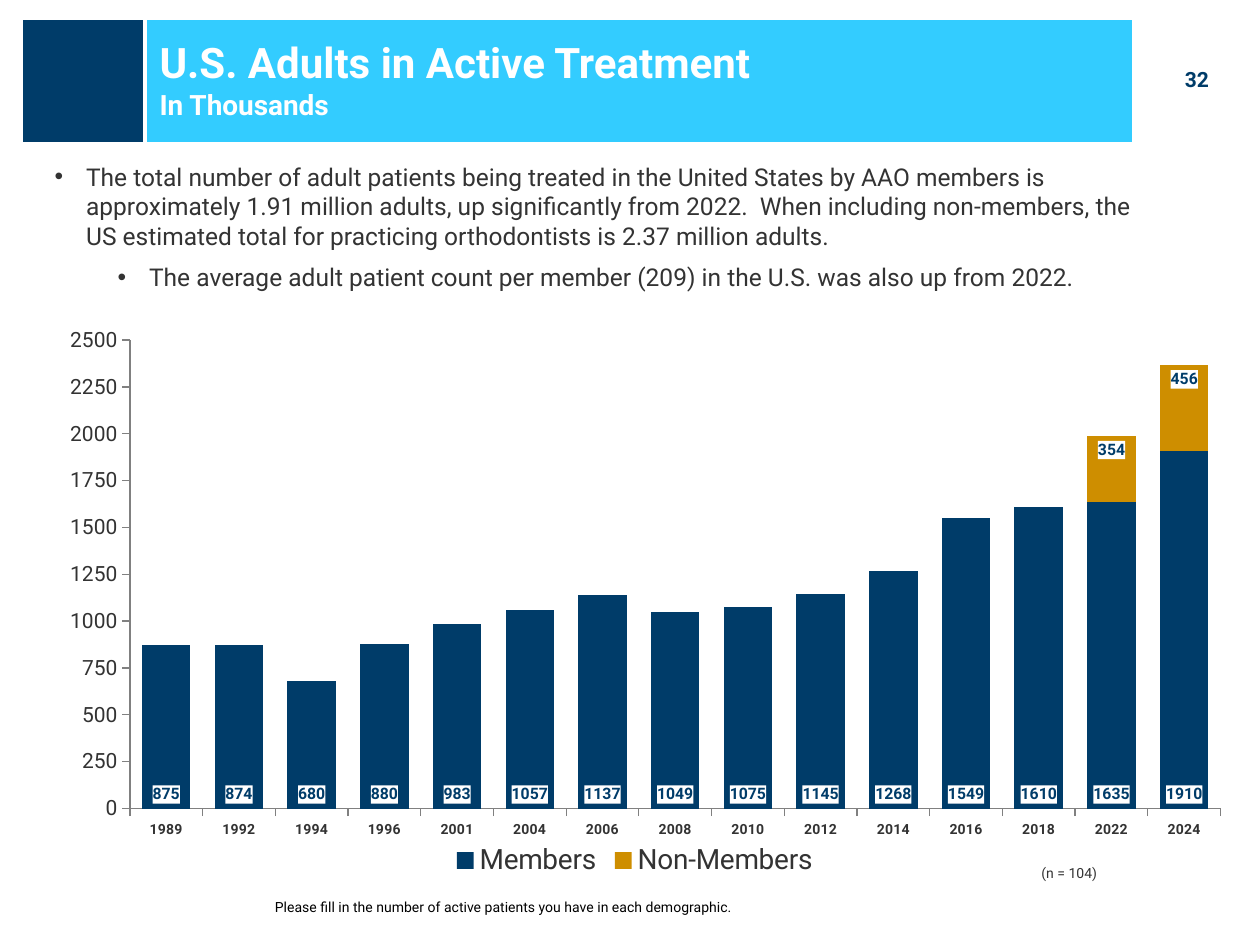
from dataclasses import dataclass

from lxml.etree import SubElement
from pptx import Presentation
from pptx.chart.data import CategoryChartData
from pptx.dml.color import RGBColor
from pptx.enum.chart import XL_CHART_TYPE, XL_LABEL_POSITION, XL_LEGEND_POSITION, XL_TICK_MARK
from pptx.enum.shapes import MSO_SHAPE
from pptx.enum.text import MSO_ANCHOR, MSO_AUTO_SIZE, PP_ALIGN
from pptx.oxml import parse_xml
from pptx.oxml.ns import nsdecls, qn
from pptx.util import Inches, Pt

COLUMNS, ROWS = 120, 90
CELL = Inches(10) // COLUMNS


@dataclass(frozen=True)
class Theme:
    font: str = "Roboto"
    navy: str = "003C69"
    sky: str = "33CCFF"
    gold: str = "CE8E00"
    white: str = "FFFFFF"
    black: str = "000000"
    text: str = "333333"
    axis: str = "808080"
    title: int = 24
    subtitle: int = 16
    body: int = 14
    number: int = 12
    value_axis: int = 12
    legend: int = 16
    label: int = 9
    small: int = 8


THEME = Theme()


@dataclass(frozen=True)
class Box:
    """A rectangle in grid columns and rows."""
    left: float
    top: float
    width: float
    height: float

    def inside(self, left, top, width, height):
        return Box(self.left + left, self.top + top, width, height)

    def lengths(self):
        return [round(value * CELL) for value in (self.left, self.top, self.width, self.height)]


YEARS = ["1989", "1992", "1994", "1996", "2001", "2004", "2006", "2008",
         "2010", "2012", "2014", "2016", "2018", "2022", "2024"]
MEMBERS = [875, 874, 680, 880, 983, 1057, 1137, 1049,
           1075, 1145, 1268, 1549, 1610, 1635, 1910]
NON_MEMBERS = [None] * 13 + [354, 456]
BULLETS = [
    "The total number of adult patients being treated in the United States by AAO members is "
    "approximately 1.91 million adults, up significantly from 2022.  When including non-members, "
    "the US estimated total for practicing orthodontists is 2.37 million adults.",
    "The average adult patient count per member (209) in the U.S. was also up from 2022.",
]


def style_font(font, size, color, bold=False):
    font.name = THEME.font
    font.size = Pt(size)
    font.bold = bold
    font.color.rgb = RGBColor.from_string(color)


def place(shape, box):
    shape.left, shape.top, shape.width, shape.height = box.lengths()


def add_block(slide, box, color):
    block = slide.shapes.add_shape(MSO_SHAPE.RECTANGLE, *box.lengths())
    block.shadow.inherit = False
    block.fill.solid()
    block.fill.fore_color.rgb = RGBColor.from_string(color)
    block.line.color.rgb = RGBColor.from_string(THEME.white)
    block.line.width = Pt(2)


def add_label(slide, box, text, size, color, bold=False, align=PP_ALIGN.LEFT):
    frame = slide.shapes.add_textbox(*box.lengths()).text_frame
    frame.word_wrap = True
    paragraph = frame.paragraphs[0]
    paragraph.text = text
    paragraph.alignment = align
    style_font(paragraph.font, size, color, bold)


def add_header(slide, box, title, subtitle, number):
    add_block(slide, box.inside(10, 0, 96, box.height), THEME.sky)
    add_block(slide, box.inside(0, 0, 11.8, box.height), THEME.navy)
    add_label(slide, box.inside(107.7, 4, 8.6, 3.6), number, THEME.number, THEME.navy,
              True, PP_ALIGN.CENTER)

    heading = slide.shapes.title
    heading.element.getparent().append(heading.element)  # in front of the blocks
    place(heading, box.inside(12, 1.3, 103, 9))
    frame = heading.text_frame
    frame.auto_size = MSO_AUTO_SIZE.NONE
    frame.vertical_anchor = MSO_ANCHOR.MIDDLE
    frame.text = f"{title}\n{subtitle}"
    for paragraph, size in zip(frame.paragraphs, (THEME.title, THEME.subtitle)):
        paragraph.alignment = PP_ALIGN.LEFT
        paragraph.space_before = Pt(0)
        style_font(paragraph.font, size, THEME.white, True)


def add_bullets(slide, box, items):
    body = slide.placeholders[1]
    place(body, box)
    frame = body.text_frame
    frame.auto_size = MSO_AUTO_SIZE.NONE
    frame.text = "\n".join(items)
    for level, paragraph in enumerate(frame.paragraphs):
        paragraph.level = level
        paragraph.space_before = Pt(THEME.body / 2 * level)
        properties = paragraph._p.get_or_add_pPr()
        properties.set("marL", str(Inches(0.25 + 0.5 * level)))
        properties.set("indent", str(Inches(-0.25)))
        SubElement(properties, qn("a:buFont"), typeface="Arial")
        SubElement(properties, qn("a:buChar"), char="•")
        style_font(paragraph.font, THEME.body, THEME.text)


def set_plot_area(chart, left, top, width, height):
    """Fix the inner plot area, in shares of the chart."""
    plot_area = chart.element.find(".//" + qn("c:plotArea"))
    for layout in plot_area.findall(qn("c:layout")):
        plot_area.remove(layout)
    settings = {"layoutTarget": "inner", "xMode": "edge", "yMode": "edge",
                "x": left, "y": top, "w": width, "h": height}
    parts = "".join(f'<c:{name} val="{value}"/>' for name, value in settings.items())
    plot_area.insert(0, parse_xml(
        f'<c:layout {nsdecls("c")}><c:manualLayout>{parts}</c:manualLayout></c:layout>'))


def style_series(series, color, position):
    series.format.fill.solid()
    series.format.fill.fore_color.rgb = RGBColor.from_string(color)
    labels = series.data_labels
    labels.show_value = True
    labels.position = position
    style_font(labels.font, THEME.label, THEME.navy, True)
    series._element.find(f"{qn('c:dLbls')}/{qn('c:txPr')}").addprevious(parse_xml(
        f'<c:spPr {nsdecls("c", "a")}><a:solidFill><a:srgbClr val="{THEME.white}"/>'
        '</a:solidFill></c:spPr>'))


def style_axis(axis, size, bold=False):
    axis.has_major_gridlines = False
    axis.major_tick_mark = XL_TICK_MARK.OUTSIDE
    axis.minor_tick_mark = XL_TICK_MARK.NONE
    axis.format.line.color.rgb = RGBColor.from_string(THEME.axis)
    style_font(axis.tick_labels.font, size, THEME.text, bold)


def add_patient_chart(slide, box):
    data = CategoryChartData()
    data.categories = YEARS
    data.add_series("Members", MEMBERS)
    data.add_series("Non-Members", NON_MEMBERS)
    chart = slide.shapes.add_chart(XL_CHART_TYPE.COLUMN_STACKED, *box.lengths(), data).chart
    style_font(chart.font, THEME.legend, THEME.text)
    chart.has_title = False
    chart.has_legend = True
    chart.legend.position = XL_LEGEND_POSITION.BOTTOM
    chart.legend.include_in_layout = False
    style_font(chart.legend.font, THEME.legend, THEME.text)
    set_plot_area(chart, 0.083, 0.046, 0.901, 0.825)

    plot = chart.plots[0]
    plot.gap_width, plot.overlap = 50, 100
    plot.vary_by_categories = False
    members, non_members = plot.series
    style_series(members, THEME.navy, XL_LABEL_POSITION.INSIDE_BASE)
    style_series(non_members, THEME.gold, XL_LABEL_POSITION.INSIDE_END)

    style_axis(chart.category_axis, THEME.small, True)
    value_axis = chart.value_axis
    style_axis(value_axis, THEME.value_axis)
    value_axis.minimum_scale, value_axis.maximum_scale = 0, 2500
    value_axis.major_unit = 250
    value_axis.tick_labels.number_format = "0"
    value_axis.tick_labels.number_format_is_linked = False


def add_notes_row(slide, box):
    add_label(slide, box.inside(73, 0, 8.8, 3), "(n = 104)", THEME.small, THEME.text)
    add_label(slide, box.inside(0, 3.3, 76, 3),
              "Please fill in the number of active patients you have in each demographic.",
              THEME.small, THEME.black)


def main():
    presentation = Presentation()
    presentation.slide_width = COLUMNS * CELL
    presentation.slide_height = ROWS * CELL
    slide = presentation.slides.add_slide(presentation.slide_layouts[1])
    add_header(slide, Box(2, 1.7, 118, 12), "U.S. Adults in Active Treatment", "In Thousands", "32")
    add_bullets(slide, Box(4, 14.8, 107, 13.9), BULLETS)
    add_patient_chart(slide, Box(2.8, 29.9, 115.3, 54.1))
    add_notes_row(slide, Box(25, 81.7, 82, 6.3))
    presentation.save("out.pptx")


if __name__ == "__main__":
    main()
